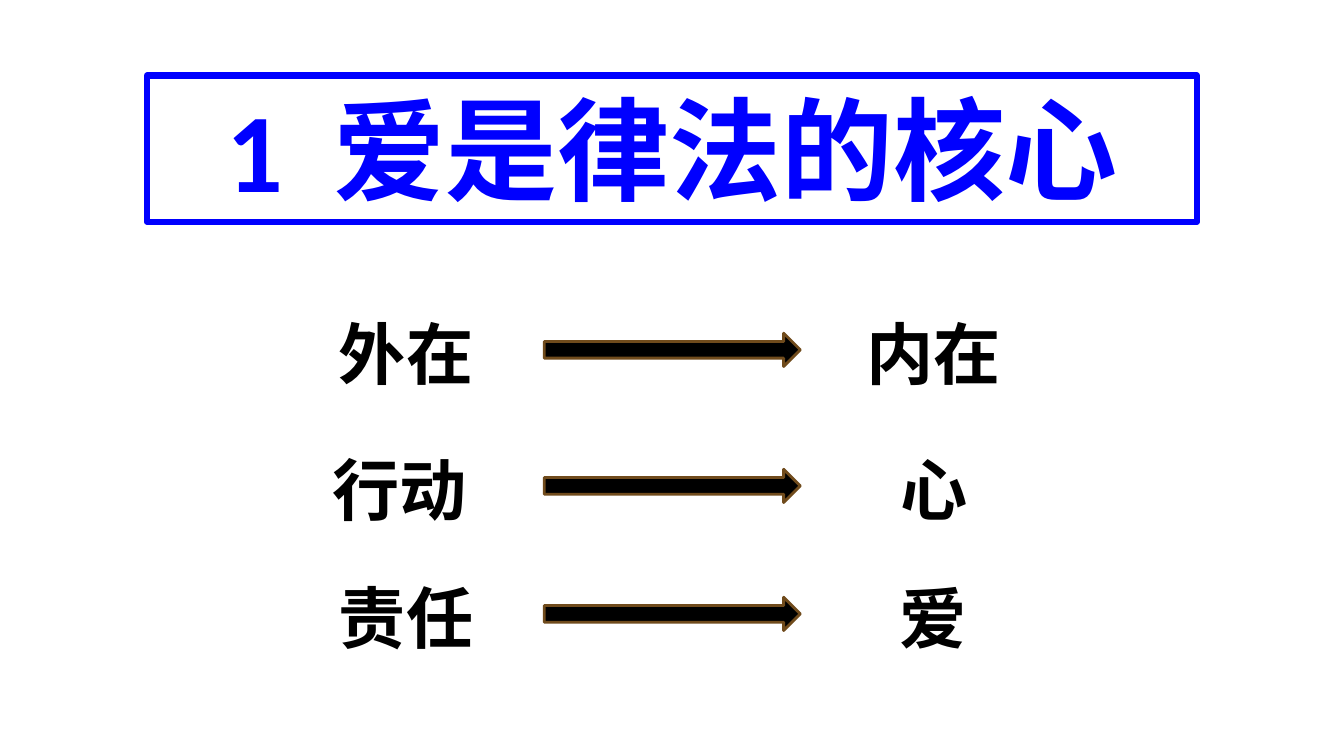
from pptx import Presentation
from pptx.dml.color import RGBColor
from pptx.enum.shapes import MSO_SHAPE
from pptx.enum.text import MSO_ANCHOR, MSO_AUTO_SIZE, PP_ALIGN
from pptx.util import Pt

RECTANGLE = MSO_SHAPE.RECTANGLE
RIGHT_ARROW = MSO_SHAPE.RIGHT_ARROW
TOP, MIDDLE = MSO_ANCHOR.TOP, MSO_ANCHOR.MIDDLE
GROW = MSO_AUTO_SIZE.SHAPE_TO_FIT_TEXT
CENTER = PP_ALIGN.CENTER

BLUE = RGBColor(0x00, 0x00, 0xFF)
BLACK = RGBColor(0x00, 0x00, 0x00)
BROWN = RGBColor(0x70, 0x4B, 0x1C)

# Top of the row, left shift of its words, outer word, inner word
CONTRASTS = [
    (216, 0, "外在", "内在"),
    (313.2, 0.7, "行动 ", "心"),
    (404.6, 0, "责任", "爱"),
]
OUTER_LEFT, INNER_LEFT, ARROW_LEFT = 154.8, 531.4, 388.8
ARROW_DROP = 22


class ContrastSlide:
    font_name = "Calibri"
    word_inset = Pt(9.36)

    def __init__(self, presentation):
        self.shapes = presentation.slides.add_slide(presentation.slide_layouts[6]).shapes

    def style(self, paragraph, size, color):
        paragraph.alignment = CENTER
        paragraph.font.name = self.font_name
        paragraph.font.size = Pt(size)
        paragraph.font.bold = True
        paragraph.font.color.rgb = color

    def outlined(self, kind, left, top, width, height, color, weight):
        shape = self.shapes.add_shape(kind, Pt(left), Pt(top), Pt(width), Pt(height))
        shape.shadow.inherit = False
        shape.line.color.rgb = color
        shape.line.width = Pt(weight)
        return shape

    def title(self, number, heading):
        """Framed heading, with letter spacing that sets the number apart."""
        frame = self.outlined(RECTANGLE, 105, 54, 750, 104.4, BLUE, 4.5)
        frame.fill.background()
        text = frame.text_frame
        text.word_wrap = True
        text.auto_size = GROW
        text.vertical_anchor = TOP
        paragraph = text.paragraphs[0]
        number_run = paragraph.add_run()
        number_run.text = number + " "
        number_run._r.get_or_add_rPr().set("spc", "900")
        paragraph.add_run().text = heading
        self.style(paragraph, 80, BLUE)

    def word(self, wording, left, top):
        box = self.shapes.add_textbox(Pt(left), Pt(top), Pt(270.7), Pt(71.3))
        text = box.text_frame
        text.word_wrap = True
        text.vertical_anchor = MIDDLE
        text.margin_left = text.margin_right = self.word_inset
        text.margin_top = text.margin_bottom = self.word_inset
        text.text = wording
        self.style(text.paragraphs[0], 48, BLACK)

    def arrow(self, left, top):
        arrow = self.outlined(RIGHT_ARROW, left, top, 182.9, 23.8, BROWN, 2)
        arrow.fill.solid()
        arrow.fill.fore_color.rgb = BLACK


def main():
    presentation = Presentation()
    presentation.slide_width = Pt(960)
    presentation.slide_height = Pt(540)

    slide = ContrastSlide(presentation)
    slide.title("1", "爱是律法的核心")
    for top, shift, outer, inner in CONTRASTS:
        slide.word(outer, OUTER_LEFT + shift, top)
        slide.word(inner, INNER_LEFT + shift, top)
        slide.arrow(ARROW_LEFT, top + ARROW_DROP)

    presentation.save("out.pptx")


if __name__ == "__main__":
    main()
